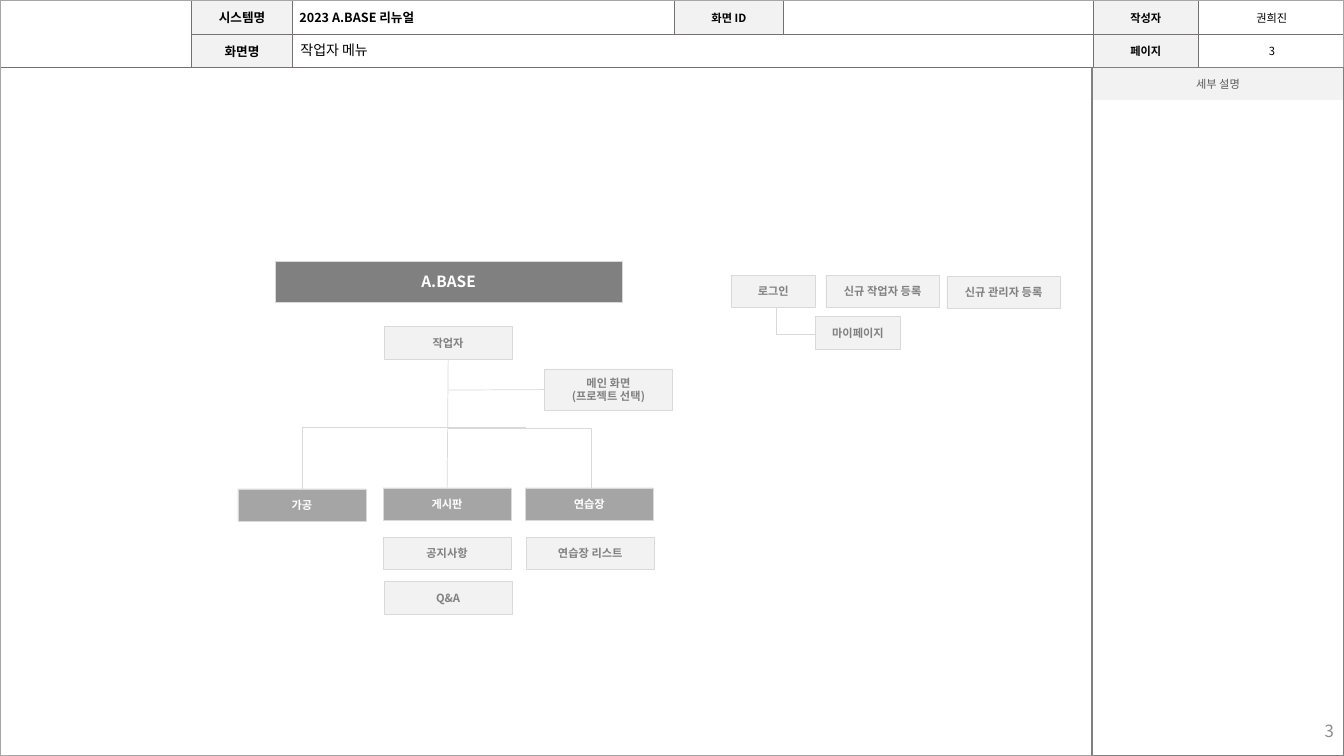
import pptx
import pptx.util
import pptx.dml.color
import pptx.enum.shapes
import pptx.enum.text
import pptx.oxml
import pptx.oxml.ns
from lxml import etree

Inches = pptx.util.Inches
Pt = pptx.util.Pt
ALIGN = pptx.enum.text.PP_ALIGN
MIDDLE = pptx.enum.text.MSO_ANCHOR.MIDDLE
qn = pptx.oxml.ns.qn

COLORS = {
    "black": "000000", "white": "FFFFFF", "label": "F2F2F2", "grid": "767171",
    "frame": "A6A6A6", "panel": "808080", "caption": "595959", "number": "8C8C8C",
    "branch": "A5A5A5", "rule": "D9D9D9",
}


class Storyboard:
    font = "Noto Sans CJK KR"

    def __init__(self, slide):
        self.slide = slide
        self.shapes = slide.shapes

    def rgb(self, color):
        return pptx.dml.color.RGBColor.from_string(COLORS[color])

    def fill_text(self, frame, text, size, color, bold=False, align=ALIGN.CENTER):
        frame.text = text
        for paragraph in frame.paragraphs:
            paragraph.alignment = align
            for run in paragraph.runs:
                run.font.size = Pt(size)
                run.font.bold = bold
                run.font.color.rgb = self.rgb(color)
                run.font.name = self.font
                etree.SubElement(run._r.get_or_add_rPr(), qn("a:ea"), typeface=self.font)

    def fill_frame(self, frame, text, size, color, bold=False, align=ALIGN.CENTER):
        self.fill_text(frame, text, size, color, bold, align)
        frame.word_wrap = True
        frame.vertical_anchor = MIDDLE

    def title(self, text, left, top, width, height):
        title = self.shapes.title
        title.left, title.top = Inches(left), Inches(top)
        title.width, title.height = Inches(width), Inches(height)
        self.fill_frame(title.text_frame, text, 10, "black", align=ALIGN.LEFT)
        title.text_frame.auto_size = pptx.enum.text.MSO_AUTO_SIZE.NONE
        title.text_frame.paragraphs[0].line_spacing = 0.9

    def text(self, text, left, top, width, height, size, color, align, margin):
        box = self.shapes.add_textbox(Inches(left), Inches(top), Inches(width), Inches(height))
        frame = box.text_frame
        self.fill_frame(frame, text, size, color, align=align)
        frame.margin_left = frame.margin_right = Inches(margin)
        frame.margin_top = frame.margin_bottom = Inches(0.02)

    def box(self, text, left, top, width=1.27, height=0.32, fill="label",
            color="panel", size=8, line="rule", line_width=0.25):
        box = self.shapes.add_shape(pptx.enum.shapes.MSO_SHAPE.RECTANGLE,
                                    Inches(left), Inches(top), Inches(width), Inches(height))
        box.shadow.inherit = False
        if fill:
            box.fill.solid()
            box.fill.fore_color.rgb = self.rgb(fill)
        else:
            box.fill.background()
        box.line.color.rgb = self.rgb(line)
        box.line.width = Pt(line_width)
        if text:
            self.fill_frame(box.text_frame, text, size, color, bold=True)
        return box

    def connect(self, start, end, bend=None):
        kinds = pptx.enum.shapes.MSO_CONNECTOR
        kind = kinds.STRAIGHT if bend is None else kinds.ELBOW
        link = self.shapes.add_connector(kind, *map(Inches, start + end))
        link.line.color.rgb = self.rgb("rule")
        link.line.width = Pt(0.5)
        properties = link._element.spPr
        etree.SubElement(properties, qn("a:effectLst"))
        if bend is not None:
            guides = properties.find(qn("a:prstGeom")).find(qn("a:avLst"))
            etree.SubElement(guides, qn("a:gd"), name="adj1", fmla=f"val {round(bend * 100000)}")
        return link

    def table(self, left, top, columns, rows):
        table = self.shapes.add_table(len(rows), len(columns), Inches(left), Inches(top),
                                      Inches(sum(columns)), Inches(sum(rows))).table
        table.first_row = table.horz_banding = False
        for column, width in zip(table.columns, columns):
            column.width = Inches(width)
        for row, height in zip(table.rows, rows):
            row.height = Inches(height)
        return table

    def cell(self, cell, borders, color, width, text="", size=8, bold=False,
             align=ALIGN.CENTER, fill=None, ink="black", indent=0.05):
        cell.margin_left, cell.margin_right = Inches(indent), Inches(0.05)
        cell.margin_top = cell.margin_bottom = Inches(0.02)
        cell.vertical_anchor = MIDDLE
        if text:
            self.fill_text(cell.text_frame, text, size, ink, bold, align)
        else:
            paragraph = cell.text_frame.paragraphs[0]._p
            etree.SubElement(paragraph, qn("a:endParaRPr"), sz="800")
        properties = cell._tc.get_or_add_tcPr()
        for side in "LRTB":
            edge = etree.SubElement(properties, qn(f"a:ln{side}"), w=str(int(Pt(width))))
            if side in borders:
                solid = etree.SubElement(edge, qn("a:solidFill"))
                etree.SubElement(solid, qn("a:srgbClr"), val=COLORS[color])
            else:
                etree.SubElement(edge, qn("a:noFill"))
        if fill:
            cell.fill.solid()
            cell.fill.fore_color.rgb = self.rgb(fill)
        else:
            cell.fill.background()


def build_header(board):
    header = board.table(0, 0, [1.9, 1, 3.79, 1.08, 3.07, 1.05, 1.45], [0.34, 0.33])
    label = {"fill": "label", "bold": True}
    entries = {
        (0, 1): {"text": "시스템명", "size": 9, **label},
        (0, 2): {"text": "2023 A.BASE 리뉴얼", "size": 9, "bold": True,
                 "align": ALIGN.LEFT, "indent": 0.07},
        (0, 3): {"text": "화면 ID", **label},
        (0, 5): {"text": "작성자", **label},
        (0, 6): {"text": "권희진"},
        (1, 1): {"text": "화면명", "size": 9, **label},
        (1, 5): {"text": "페이지", **label},
    }
    for row in range(2):
        for column in range(7):
            board.cell(header.cell(row, column), "LRTB", "grid", 0.5,
                       **entries.get((row, column), {}))
    header.cell(0, 0).merge(header.cell(1, 0))
    header.cell(1, 2).merge(header.cell(1, 4))


def build_menu(board):
    board.connect((7.74, 3.01), (8.11, 3.32), bend=-0.1)
    board.box("마이페이지", 8.09, 3.14, 0.84)
    board.box("A.BASE", 2.73, 2.59, 3.44, 0.41, "panel", "white", 11)
    board.box("로그인", 7.25, 2.73, 0.84)
    board.box("신규 작업자 등록", 8.19, 2.73, 1.13)
    board.box("신규 관리자 등록", 9.39, 2.74, 1.13)
    board.box("가공", 2.36, 4.85, fill="branch", color="white")
    bulletin = board.box("게시판", 3.8, 4.84, fill="branch", color="white")
    board.box("연습장", 5.21, 4.84, fill="branch", color="white")
    worker = board.box("작업자", 3.81, 3.24)
    main_screen = board.box("메인 화면\n(프로젝트 선택)", 5.4, 3.66, height=0.41)
    board.box("공지사항", 3.8, 5.33)
    board.box("연습장 리스트", 5.22, 5.33)
    board.box("Q&A", 3.81, 5.77)

    board.connect((5.22, 4.24), (3, 4.85), bend=1)
    board.connect((4.44, 4.25), (5.86, 4.85), bend=1)
    board.connect((4.44, 4.25), (4.44, 4.84)).end_connect(bulletin, 0)
    board.connect((4.45, 3.87), (5.4, 3.87)).end_connect(main_screen, 1)
    board.connect((4.44, 3.56), (4.44, 4.24)).begin_connect(worker, 2)


def main():
    deck = pptx.Presentation()
    deck.slide_width, deck.slide_height = Inches(13.33), Inches(7.5)
    board = Storyboard(deck.slides.add_slide(deck.slide_layouts[5]))
    build_header(board)
    board.box("", 0, 0, 13.33, 7.5, fill=None, line="frame", line_width=1.3)
    board.text("3", 12.48, 0.43, 0.27, 0.16, 8, "black", ALIGN.CENTER, 0.04)
    details = board.table(10.83, 0.67, [2.5], [0.32, 6.51])
    board.cell(details.cell(0, 0), "LTR", "panel", 1, "세부 설명", fill="label", ink="caption")
    board.cell(details.cell(1, 0), "LRB", "panel", 1)
    board.text("3", 10.33, 7.15, 3, 0.2, 12, "number", ALIGN.RIGHT, 0.1)
    build_menu(board)
    board.title("작업자 메뉴", 2.88, 0.36, 6.28, 0.3)
    deck.save("out.pptx")


if __name__ == "__main__":
    main()
